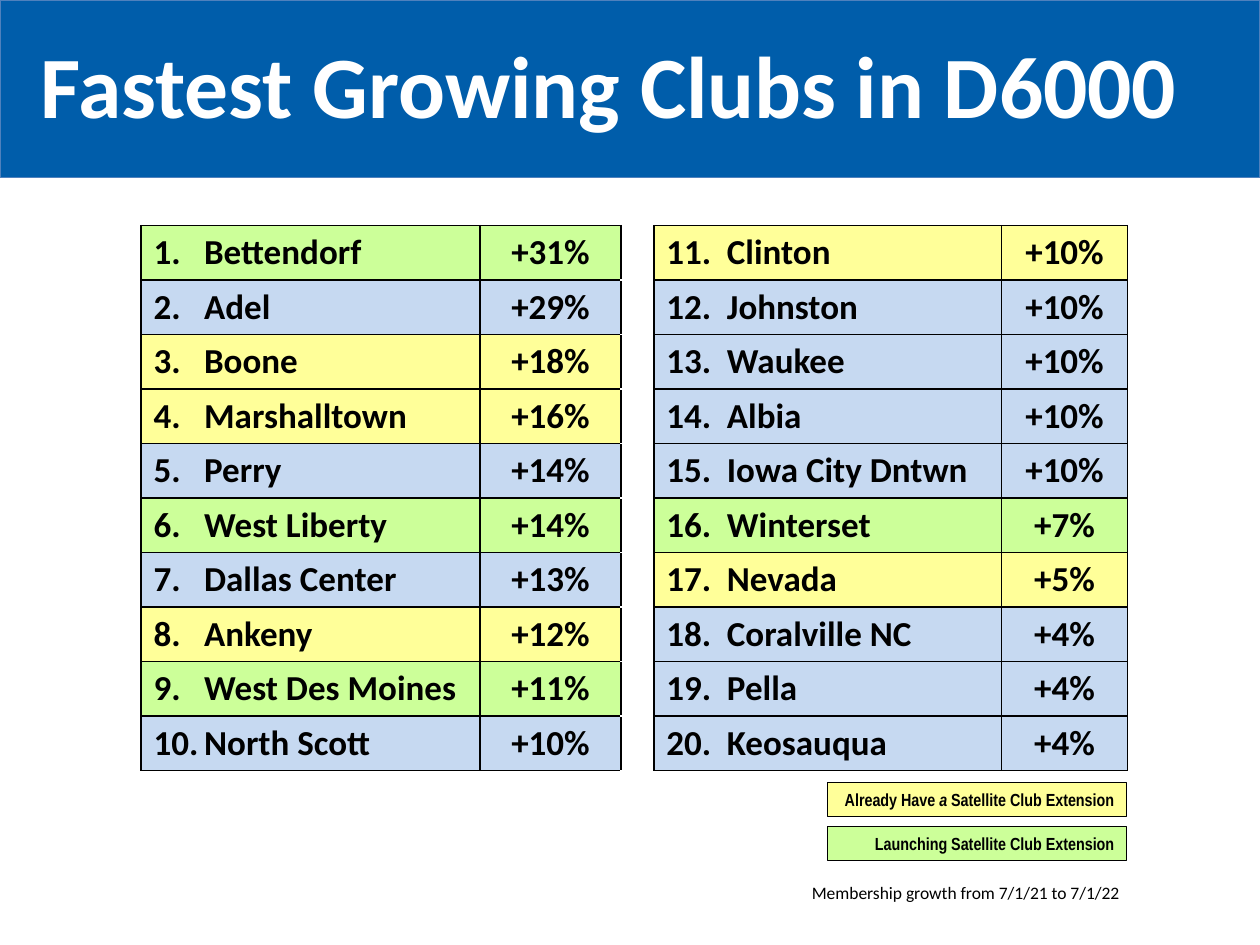
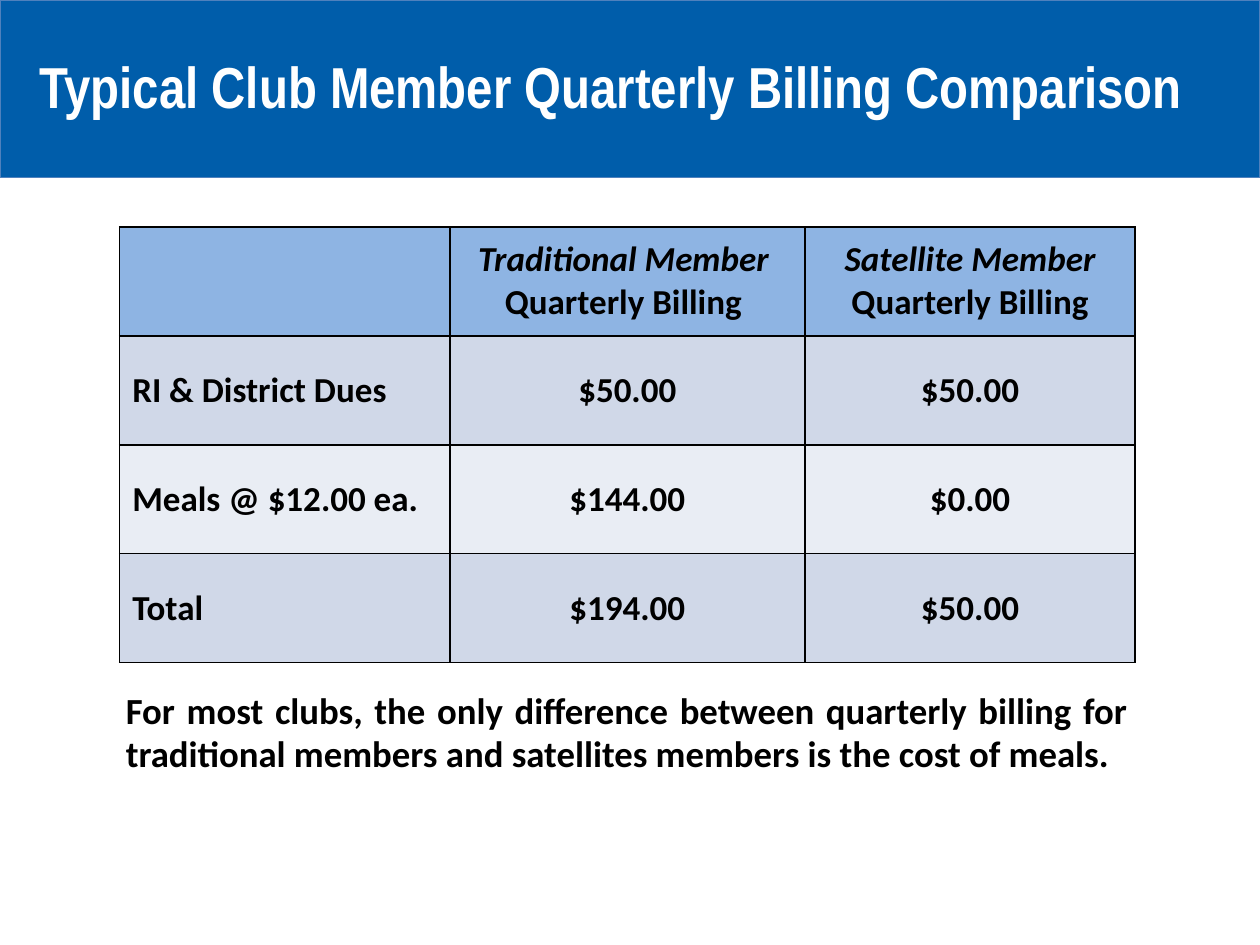
from lxml import etree
from pptx import Presentation
from pptx.dml.color import RGBColor
from pptx.enum.shapes import MSO_SHAPE as Shape
from pptx.enum.text import MSO_ANCHOR as Anchor, PP_ALIGN as Align
from pptx.oxml.ns import qn
from pptx.util import Inches, Pt

# Shared colours and fonts
BLACK, WHITE, BAND, BAND_EDGE = "000000", "FFFFFF", "005DAA", "4F81BD"
PLAIN, HAS_SATELLITE, LAUNCHING = "C6D9F1", "FFFF99", "CCFF99"
HEADER, ROW_DARK, ROW_LIGHT = "8EB4E3", "D0D8E8", "E9EDF4"
BODY_FONT, NARROW_FONT = "Calibri", "Arial Narrow"

LEFT_CLUBS = [
    ("Bettendorf", "+31%", LAUNCHING),
    ("Adel", "+29%", PLAIN),
    ("Boone", "+18%", HAS_SATELLITE),
    ("Marshalltown", "+16%", HAS_SATELLITE),
    ("Perry", "+14%", PLAIN),
    ("West Liberty", "+14%", LAUNCHING),
    ("Dallas Center", "+13%", PLAIN),
    ("Ankeny", "+12%", HAS_SATELLITE),
    ("West Des Moines", "+11%", LAUNCHING),
    ("North Scott", "+10%", PLAIN),
]
RIGHT_CLUBS = [
    ("Clinton", "+10%", HAS_SATELLITE),
    ("Johnston", "+10%", PLAIN),
    ("Waukee", "+10%", PLAIN),
    ("Albia", "+10%", PLAIN),
    ("Iowa City Dntwn", "+10%", PLAIN),
    ("Winterset", "+7%", LAUNCHING),
    ("Nevada", "+5%", HAS_SATELLITE),
    ("Coralville NC", "+4%", PLAIN),
    ("Pella", "+4%", PLAIN),
    ("Keosauqua", "+4%", PLAIN),
]
BILLING = [
    ("RI & District Dues", "$50.00", "$50.00"),
    ("Meals @ $12.00 ea.", "$144.00", "$0.00"),
    ("Total", "$194.00", "$50.00"),
]


def color(value):
    return RGBColor.from_string(value)


def style(para, size, font=BODY_FONT, ink=BLACK, bold=True, italic=False,
          align=Align.LEFT, spacing=None):
    para.alignment = align
    if spacing:
        para.line_spacing = spacing
    para.font.size, para.font.name = Pt(size), font
    para.font.bold, para.font.italic = bold, italic
    para.font.color.rgb = color(ink)


def add_box(page, box, fill, edge):
    shape = page.shapes.add_shape(Shape.RECTANGLE, *map(Inches, box))
    shape.shadow.inherit = False
    shape.fill.solid()
    shape.fill.fore_color.rgb = color(fill)
    shape.line.color.rgb = color(edge)
    shape.line.width = Pt(0.75)
    return shape


def add_text(page, box, text, size, **look):
    frame = page.shapes.add_textbox(*map(Inches, box)).text_frame
    frame.word_wrap = True
    frame.text = text
    style(frame.paragraphs[0], size, **look)


def add_band(page):
    """Blue title band, kept on the layout so that all slides share it."""
    band = add_box(page, (0, 0, 10, 1.41), BAND, BAND_EDGE)
    page.slide_layout.placeholders[0].element.addprevious(band.element)


def set_title(page, box, text, size, font, spacing):
    title = page.shapes.title
    title.left, title.top, title.width, title.height = map(Inches, box)
    frame = title.text_frame
    frame.text = text
    frame.word_wrap = True
    frame.vertical_anchor = Anchor.TOP
    style(frame.paragraphs[0], size, font, WHITE, spacing=spacing)


# Table helpers
def set_borders(cell, sides=BLACK, ends=BLACK):
    props = cell._tc.get_or_add_tcPr()
    edges = (("a:lnL", sides), ("a:lnR", sides), ("a:lnT", ends), ("a:lnB", ends))
    for place, (tag, ink) in enumerate(edges):
        line = etree.Element(qn(tag), w=str(Pt(1)))
        fill = etree.SubElement(line, qn("a:solidFill"))
        etree.SubElement(fill, qn("a:srgbClr"), val=ink)
        props.insert(place, line)


def add_grid(page, left, top, widths, height, row_count):
    frame = page.shapes.add_table(row_count, len(widths), Inches(left), Inches(top),
                                  Inches(sum(widths)), Inches(height))
    table = frame.table
    for column, width in zip(table.columns, widths):
        column.width = Inches(width)
    for row in table.rows:
        row.height = Inches(height / row_count)
    return table


def fill_cell(cell, text, fill, align=Align.LEFT, tab=None, italic_first=False):
    cell.fill.solid()
    cell.fill.fore_color.rgb = color(fill)
    set_borders(cell)
    cell.vertical_anchor = Anchor.MIDDLE
    cell.margin_top = cell.margin_bottom = Inches(0.03)
    cell.text = text
    for index, para in enumerate(cell.text_frame.paragraphs):
        if tab:
            stops = etree.SubElement(para._p.get_or_add_pPr(), qn("a:tabLst"))
            etree.SubElement(stops, qn("a:tab"), pos=str(Inches(tab)), algn="l")
        style(para, 20, align=align, italic=italic_first and index == 0)


# Ranking slide
def add_ranking(page, left, top):
    table = add_grid(page, left, top, (2.69, 1.12, 0.26, 2.76, 1), 4.33, len(LEFT_CLUBS))
    halves = ((LEFT_CLUBS, 0, 1, 0.4), (RIGHT_CLUBS, 3, 11, 0.48))
    for clubs, column, first_rank, tab in halves:
        for row, (club, growth, fill) in enumerate(clubs):
            fill_cell(table.cell(row, column), f"{first_rank + row}.\t{club}", fill, tab=tab)
            fill_cell(table.cell(row, column + 1), growth, fill, Align.CENTER)
    for row in range(len(LEFT_CLUBS)):
        gap = table.cell(row, 2)
        gap.fill.background()
        set_borders(gap, ends=WHITE)


def add_legend(page, left, top):
    entries = (
        (HAS_SATELLITE, ("Already Have ", "a ", "Satellite Club Extension")),
        (LAUNCHING, ("Launching Satellite Club Extension",)),
    )
    for index, (fill, parts) in enumerate(entries):
        key = add_box(page, (left, top + 0.35 * index, 2.37, 0.27), fill, BLACK)
        key.text_frame.word_wrap = True
        key.text_frame.vertical_anchor = Anchor.MIDDLE
        para = key.text_frame.paragraphs[0]
        style(para, 10, NARROW_FONT, align=Align.RIGHT)
        for part in parts:
            span = para.add_run()
            span.text = part
            if part == "a ":
                span.font.italic = True


def build_growth_slide(page):
    set_title(page, (0.22, 0.42, 9.62, 0.75), "Fastest Growing Clubs in D6000",
              50, BODY_FONT, Pt(44))
    add_ranking(page, 1.12, 1.79)
    add_legend(page, 6.57, 6.21)
    add_text(page, (5.36, 6.95, 3.62, 0.27), "Membership growth from 7/1/21 to 7/1/22",
             10, bold=False, align=Align.RIGHT)


# Billing slide
def add_billing(page, left, top):
    table = add_grid(page, left, top, (2.62, 2.82, 2.62), 3.46, len(BILLING) + 1)
    headings = ("", "Traditional Member \nQuarterly Billing ",
                "Satellite Member\nQuarterly Billing")
    for column, heading in enumerate(headings):
        fill_cell(table.cell(0, column), heading, HEADER, Align.CENTER, italic_first=True)
    for row, values in enumerate(BILLING, 1):
        fill = ROW_DARK if row % 2 else ROW_LIGHT
        for column, value in enumerate(values):
            fill_cell(table.cell(row, column), value, fill,
                      Align.CENTER if column else Align.LEFT)


def build_billing_slide(page):
    set_title(page, (0.21, 0.46, 9.59, 0.71),
              "Typical Club Member Quarterly Billing Comparison", 33, NARROW_FONT, 0.8)
    add_billing(page, 0.95, 1.8)
    add_text(page, (0.9, 5.43, 8.15, 0.77),
             "For most clubs, the only difference between quarterly billing for "
             "traditional members and satellites members is the cost of meals.",
             21, align=Align.JUSTIFY, spacing=Pt(24))


def main():
    deck = Presentation()
    deck.slide_width, deck.slide_height = Inches(10), Inches(7.5)
    title_only = deck.slide_layouts[5]
    growth, billing = (deck.slides.add_slide(title_only) for _ in range(2))
    add_band(growth)
    build_growth_slide(growth)
    build_billing_slide(billing)
    deck.save("out.pptx")


if __name__ == "__main__":
    main()
